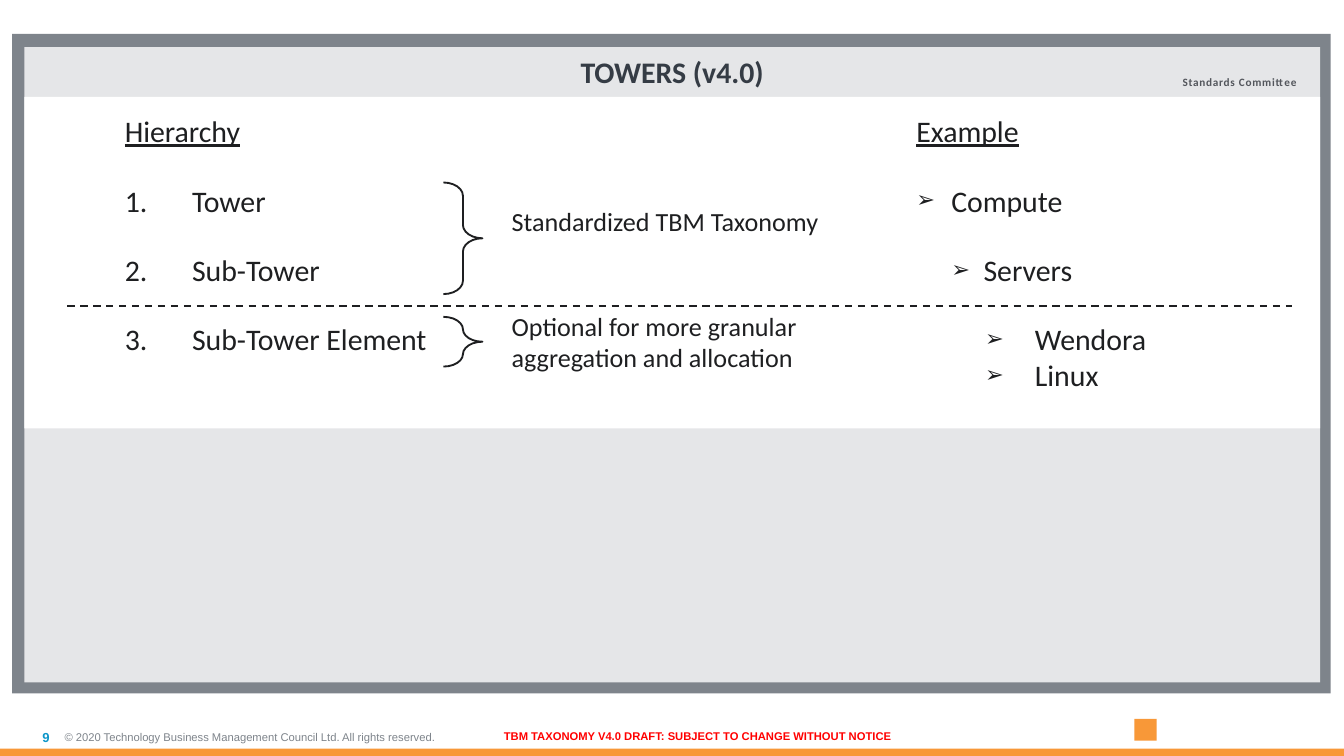
from lxml.etree import SubElement
from pptx import Presentation
from pptx.dml.color import RGBColor
from pptx.enum.dml import MSO_LINE
from pptx.enum.shapes import MSO_CONNECTOR, MSO_SHAPE
from pptx.enum.text import MSO_ANCHOR, PP_ALIGN
from pptx.oxml.ns import qn
from pptx.util import Cm, Pt

INK = "1E1F21"
GREY = "7E848B"
ORANGE = "F89838"


def color(code):
    return RGBColor.from_string(code)


def lengths(box):
    return [Cm(v) for v in box]


def add_rect(slide, box, fill):
    rect = slide.shapes.add_shape(MSO_SHAPE.RECTANGLE, *lengths(box))
    rect.shadow.inherit = False
    rect.fill.solid()
    rect.fill.fore_color.rgb = color(fill)
    rect.line.fill.background()
    return rect


def add_brace(slide, box):
    brace = slide.shapes.add_shape(MSO_SHAPE.RIGHT_BRACE, *lengths(box))
    brace.shadow.inherit = False
    brace.adjustments[0] = 0.34
    brace.fill.background()
    brace.line.color.rgb = color(INK)
    brace.line.width = Pt(1)


def add_dash(slide, left, right, y):
    line = slide.shapes.add_connector(
        MSO_CONNECTOR.STRAIGHT, *lengths((left, y, right, y)))
    line.line.color.rgb = color(INK)
    line.line.width = Pt(1)
    line.line.dash_style = MSO_LINE.DASH
    SubElement(line._element.spPr, qn("a:effectLst"))


def add_box(slide, box, wrap=True, tight=False, anchor=MSO_ANCHOR.TOP):
    shape = slide.shapes.add_textbox(*lengths(box))
    frame = shape.text_frame
    frame.word_wrap = wrap
    frame.vertical_anchor = anchor
    if tight:
        frame.margin_left = frame.margin_right = 0
        frame.margin_top = frame.margin_bottom = 0
    return shape


def set_mark(para, mark, left, hang):
    props = para._p.get_or_add_pPr()
    props.set("marL", str(Cm(left)))
    props.set("indent", str(-Cm(hang)))
    if mark == "1.":
        SubElement(props, qn("a:buAutoNum"), type="arabicPeriod")
    else:
        SubElement(props, qn("a:buSzPct"), val="75000")
        SubElement(props, qn("a:buFont"), typeface="Arial")
        SubElement(props, qn("a:buChar"), char=mark)


def write(shape, text, size=16, font="Calibri", ink=INK, bold=False,
          under=False, align=PP_ALIGN.LEFT, before=0, mark=None,
          left=0, hang=0, level=0, track=0):
    """Add one paragraph to the shape, filling the empty first one."""
    frame = shape.text_frame
    para = frame.paragraphs[0]
    if para.runs:
        para = frame.add_paragraph()
    if mark:
        set_mark(para, mark, left, hang)
    para.level = level
    para.alignment = align
    if before:
        para.space_before = Pt(before)
    run = para.add_run()
    run.text = text
    run.font.size = Pt(size)
    run.font.name = font
    run.font.bold = bold
    run.font.underline = under
    run.font.color.rgb = color(ink)
    if track:
        run.font._element.set("spc", str(round(track * 100)))


def add_footer(slide):
    note = add_box(slide, (1.22, 13.56, 8.53, 0.74), tight=True,
                   anchor=MSO_ANCHOR.MIDDLE)
    write(note, "© 2020 Technology Business Management Council Ltd. "
          "All rights reserved.", size=6, font="Arial", ink=GREY)
    page = add_box(slide, (0, 13.56, 0.94, 0.74), tight=True,
                   anchor=MSO_ANCHOR.MIDDLE)
    write(page, "9", size=7, font="Arial", ink="0D96C9", bold=True,
          align=PP_ALIGN.RIGHT)
    # Plain block in the logo's place
    add_rect(slide, (21.44, 13.59, 0.42, 0.41), ORANGE)
    add_rect(slide, (0, 14.15, 25.4, 0.14), ORANGE)
    draft = add_box(slide, (9.47, 13.79, 7.42, 0.25), wrap=False,
                    tight=True, anchor=MSO_ANCHOR.MIDDLE)
    write(draft, "TBM TAXONOMY V4.0 DRAFT: SUBJECT TO CHANGE WITHOUT NOTICE",
          size=6, font="Arial", ink="FF0000", bold=True,
          align=PP_ALIGN.CENTER)


def add_panel(slide):
    # Frame, title band and white field
    add_rect(slide, (0.23, 0.64, 24.92, 12.47), GREY)
    panel = add_rect(slide, (0.46, 0.89, 24.49, 12.01), "E5E6E8")
    panel.text_frame.vertical_anchor = MSO_ANCHOR.TOP
    write(panel, "TOWERS (v4.0)", ink="353C45", bold=True,
          align=PP_ALIGN.CENTER)
    label = add_box(slide, (22.35, 1.42, 2.21, 0.25), wrap=False, tight=True)
    write(label, "Standards Committee", size=6, ink="53565C", bold=True,
          track=0.4)
    add_rect(slide, (0.46, 1.83, 24.49, 6.27), "FFFFFF")


def add_lists(slide):
    # Numbered ranks
    ranks = add_box(slide, (2.11, 2.01, 6.93, 4.72))
    write(ranks, "Hierarchy", under=True)
    for name in ("Tower", "Sub-Tower", "Sub-Tower Element"):
        write(ranks, name, before=18, mark="1.", left=1.27, hang=1.27)

    # Indented example
    sample = add_box(slide, (17.07, 2.01, 7.34, 5.59))
    write(sample, "Example", under=True)
    for name, level, left, hang, before in (
            ("Compute", 0, 0.66, 0.66, 18),
            ("Servers", 1, 1.27, 0.61, 18),
            ("Wendora", 2, 2.24, 0.94, 18),
            ("Linux", 2, 2.24, 0.94, 0)):
        write(sample, name, level=level, left=left, hang=hang,
              before=before, mark="➢")


def add_notes(slide):
    # Braces with their remarks, and the divider
    for top, height, box, text in (
            (3.45, 2.11, (9.42, 3.76, 7.34, 0.86),
             "Standardized TBM Taxonomy"),
            (5.99, 0.94, (9.42, 5.74, 6.83, 1.45),
             "Optional for more granular aggregation and allocation")):
        add_brace(slide, (8.38, top, 0.74, height))
        write(add_box(slide, box), text, size=14)
    add_dash(slide, 1.27, 24.41, 5.79)


def main():
    deck = Presentation()
    deck.slide_width, deck.slide_height = Cm(25.4), Cm(14.29)
    slide = deck.slides.add_slide(deck.slide_layouts[6])
    add_footer(slide)
    add_panel(slide)
    add_lists(slide)
    add_notes(slide)
    deck.save("out.pptx")


if __name__ == "__main__":
    main()
